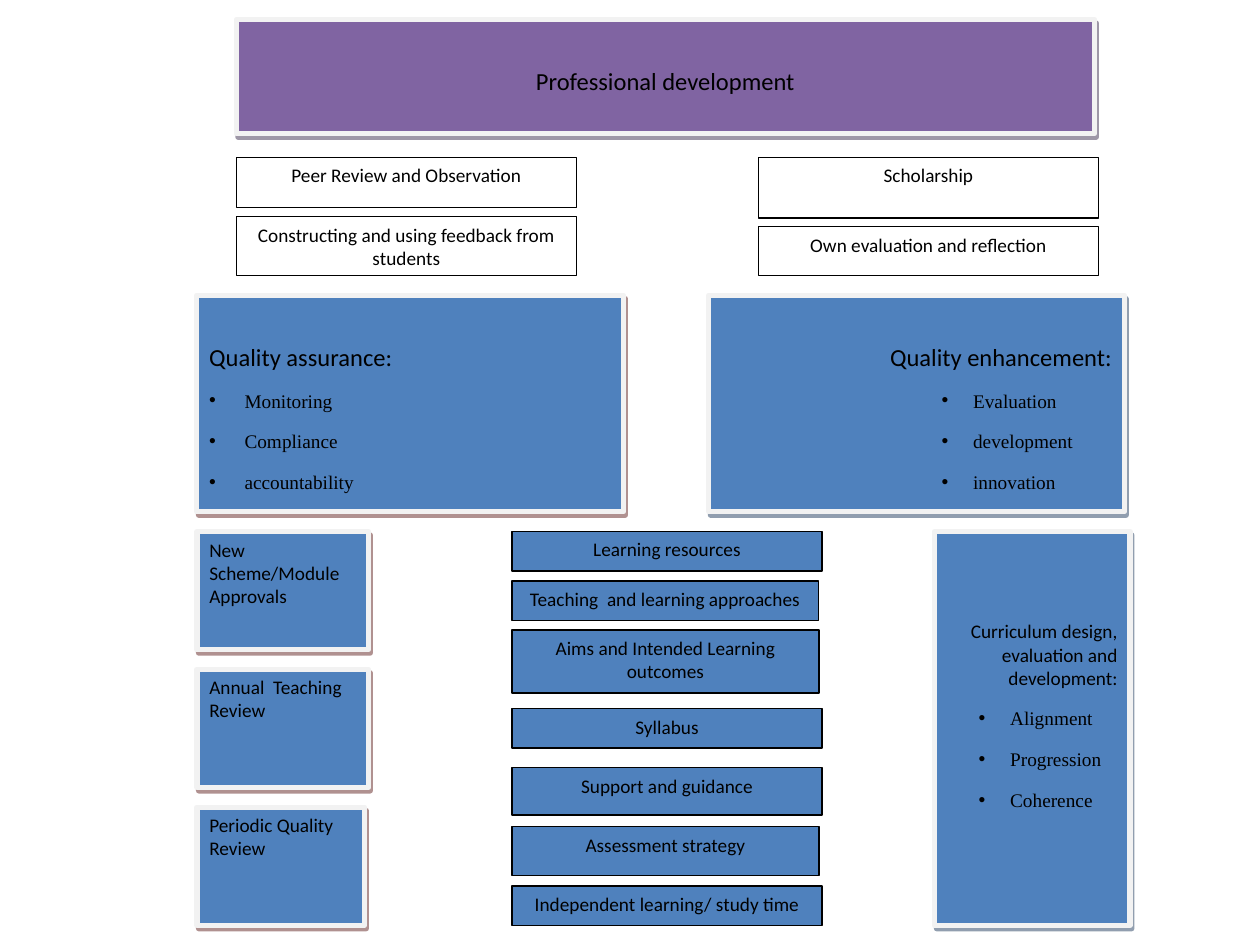
"""Builds a one-slide map of professional development, quality and curriculum."""
from lxml.etree import SubElement
from pptx import Presentation
from pptx.dml.color import RGBColor
from pptx.enum.shapes import MSO_SHAPE
from pptx.enum.text import MSO_ANCHOR, PP_ALIGN
from pptx.oxml.ns import qn
from pptx.util import Inches, Pt

presentation = Presentation()
presentation.slide_width = Inches(10)
presentation.slide_height = Inches(7.5)
slide = presentation.slides.add_slide(presentation.slide_layouts[6])
CELL = presentation.slide_width / 160

BLUE, PURPLE, WHITE, BLACK, PALE = "4F81BD", "8064A2", "FFFFFF", "000000", "F2F2F2"
RED_SHADOW, BLUE_SHADOW, PURPLE_SHADOW = "622423", "243F60", "3F3151"
LEFT, CENTER, RIGHT, JUSTIFY = PP_ALIGN.LEFT, PP_ALIGN.CENTER, PP_ALIGN.RIGHT, PP_ALIGN.JUSTIFY


def add_text(shape, text, size=11, font="Calibri", align=CENTER, indent=None, hanging=0.25):
    frame = shape.text_frame
    paragraph = frame.paragraphs[0] if not frame.text else frame.add_paragraph()
    paragraph.alignment = align
    paragraph.space_after = Pt(10)
    run = paragraph.add_run()
    run.text = text
    run.font.size = Pt(size)
    run.font.name = font
    run.font.color.rgb = RGBColor.from_string(BLACK)
    if indent is not None:
        properties = paragraph._p.get_or_add_pPr()
        properties.set("marL", str(Inches(indent)))
        properties.set("indent", str(-Inches(hanging)))
        SubElement(properties, qn("a:buFont"), typeface="Arial")
        SubElement(properties, qn("a:buChar"), char="•")


def add_box(column, row, columns, rows, fill, shadow=None, top=0.05):
    shape = slide.shapes.add_shape(
        MSO_SHAPE.RECTANGLE, *[round(value * CELL) for value in (column, row, columns, rows)])
    shape.fill.solid()
    shape.fill.fore_color.rgb = RGBColor.from_string(fill)
    shape.line.color.rgb = RGBColor.from_string(PALE if shadow else BLACK)
    shape.line.width = Pt(3 if shadow else 0.75)
    shape.shadow.inherit = False
    if shadow:
        effects = shape._element.spPr.find(qn("a:effectLst"))
        outer = SubElement(effects, qn("a:outerShdw"), dist=str(Pt(2.2)),
                           dir=str(63 * 60000), algn="ctr", rotWithShape="0")
        color = SubElement(outer, qn("a:srgbClr"), val=shadow)
        SubElement(color, qn("a:alpha"), val="50000")
    shape.text_frame.word_wrap = True
    shape.text_frame.vertical_anchor = MSO_ANCHOR.TOP
    shape.text_frame.margin_top = Inches(top)
    return shape


banner = add_box(30, 2.5, 109, 14.5, PURPLE, PURPLE_SHADOW, top=0.37)
add_text(banner, "Professional development", size=14)

for column, row, rows, activity in [
    (30, 20, 6.4, "Peer Review and Observation"),
    (30, 27.5, 7.5, "Constructing and using feedback from students"),
    (96.3, 20, 7.7, "Scholarship"),
    (96.3, 28.8, 6.2, "Own evaluation and reflection"),
]:
    add_text(add_box(column, row, 43.2, rows, WHITE), activity)

for place, shadow, top, heading, size, align, points, point_format in [
    ((25, 37.5, 54.2, 27.5), RED_SHADOW, 0.37, "Quality assurance:", 14, JUSTIFY,
     ("Monitoring", "Compliance", "accountability"),
     {"align": JUSTIFY, "indent": 0.28, "hanging": 0.28}),
    ((90, 37.5, 52.8, 27.5), BLUE_SHADOW, 0.37, "Quality enhancement:", 14, RIGHT,
     ("Evaluation", "development", "innovation"),
     {"align": LEFT, "indent": 2}),
    ((118.7, 67.5, 24.8, 50), BLUE_SHADOW, 0.7,
     "Curriculum design, evaluation and development:", 11, RIGHT,
     ("Alignment", "Progression", "Coherence"),
     {"align": LEFT, "indent": 0.5}),
]:
    panel = add_box(*place, BLUE, shadow, top)
    add_text(panel, heading, size=size, align=align)
    for point in points:
        add_text(panel, point, font="Times New Roman", **point_format)

for index, (columns, review) in enumerate([
    (21.8, "New Scheme/Module Approvals"),
    (21.8, "Annual  Teaching Review"),
    (21.3, "Periodic Quality Review"),
]):
    review_box = add_box(25, 67.5 + 17.5 * index, columns, 15, BLUE, RED_SHADOW)
    add_text(review_box, review, align=LEFT)

for row, columns, rows, element in [
    (67.5, 39.4, 5, "Learning resources"),
    (73.8, 38.9, 5, "Teaching  and learning approaches"),
    (80, 39, 8, "Aims and Intended Learning outcomes"),
    (90, 39.4, 5, "Syllabus"),
    (97.5, 39.4, 6, "Support and guidance"),
    (105, 39, 6.2, "Assessment strategy"),
    (112.5, 39.4, 5, "Independent learning/ study time"),
]:
    add_text(add_box(65, row, columns, rows, BLUE), element)

presentation.save("out.pptx")
